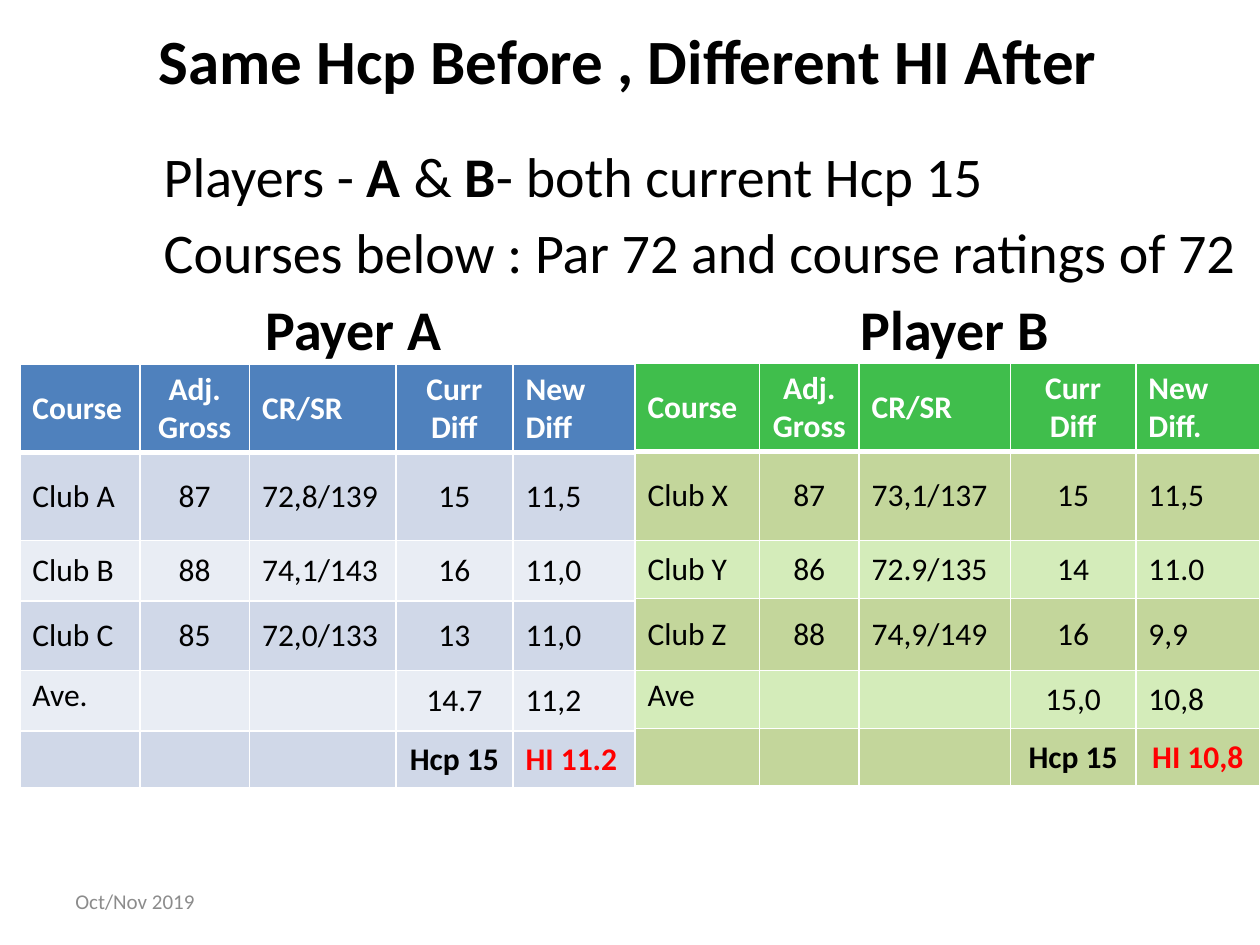
import pptx
import pptx.dml.color
import pptx.enum.text
import pptx.oxml
import pptx.oxml.ns
import pptx.util
from lxml import etree

Cm = pptx.util.Cm
Pt = pptx.util.Pt
ALIGN = pptx.enum.text.PP_ALIGN
ANCHOR = pptx.enum.text.MSO_ANCHOR
FONT = "Calibri"
CENTRED_COLUMNS = (1, 3)

PLAYER_A = [
    ["Course", "Adj.\nGross", "CR/SR", "Curr\nDiff", "New Diff"],
    ["Club A", "87", "72,8/139", "15", "11,5"],
    ["Club B", "88", "74,1/143", "16", "11,0"],
    ["Club C", "85", "72,0/133", "13", "11,0"],
    ["Ave.", "", "", "14.7", "11,2"],
    ["", "", "", "Hcp 15", "HI 11.2"],
]
PLAYER_B = [
    ["Course", "Adj.\nGross", "CR/SR", "Curr\nDiff", "New Diff."],
    ["Club X", "87", "73,1/137", "15", "11,5"],
    ["Club Y", "86", "72.9/135", "14", "11.0"],
    ["Club Z", "88", "74,9/149", "16", "9,9"],
    ["Ave", "", "", "15,0", "10,8"],
    ["", "", "", "Hcp 15", "HI 10,8"],
]


def colour(value):
    return pptx.dml.color.RGBColor.from_string(value)


def add_span(para, text, size, shade="000000", bold=False):
    span = para.add_run()
    span.text = text
    span.font.name = FONT
    span.font.size = Pt(size)
    span.font.bold = bold
    span.font.color.rgb = colour(shade)


def place(shape, box):
    shape.left, shape.top, shape.width, shape.height = [Cm(v) for v in box]


def add_title(page, box):
    title = page.shapes.title
    place(title, box)
    title.text_frame.vertical_anchor = ANCHOR.MIDDLE
    para = title.text_frame.paragraphs[0]
    para.alignment = ALIGN.CENTER
    add_span(para, "Same Hcp Before , Different HI After ", 36, bold=True)


def add_text_box(page, box):
    frame = page.shapes.add_textbox(*[Cm(v) for v in box]).text_frame
    frame.word_wrap = True
    return frame


def add_tabs(para, stops):
    tabs = etree.SubElement(para._p.get_or_add_pPr(), pptx.oxml.ns.qn("a:tabLst"))
    for stop in stops:
        etree.SubElement(tabs, pptx.oxml.ns.qn("a:tab"), pos=str(Cm(stop)), algn="l")


def add_introduction(page, box):
    frame = add_text_box(page, box)
    lines = [
        [("Players - ", False), ("A", True), (" & ", False), ("B", True),
         ("- both current Hcp 15", False)],
        [("Courses below : Par 72 and course ratings of 72", False)],
        [("\tPayer A\tPlayer B", True)],
    ]
    for index, line in enumerate(lines):
        para = frame.add_paragraph() if index else frame.paragraphs[0]
        if index:
            para.space_before = Pt(5.5)
        if line is lines[-1]:
            add_tabs(para, (5.1, 17.1))
        else:
            para._p.get_or_add_pPr().set("marL", str(Cm(3.05)))
        for text, bold in line:
            add_span(para, text, 32, bold=bold)


def add_borders(cell, widths):
    properties = cell._tc.get_or_add_tcPr()
    for side, width in zip("LRTB", widths):
        properties.append(pptx.oxml.parse_xml(
            f'<a:ln{side} {pptx.oxml.ns.nsdecls("a")} w="{Pt(width)}">'
            f'<a:solidFill><a:srgbClr val="FFFFFF"/></a:solidFill></a:ln{side}>'))


def fill_cell(cell, text, fill, shade, bold, alignment):
    cell.fill.solid()
    cell.fill.fore_color.rgb = colour(fill)
    if not text:
        return
    for index, line in enumerate(text.split("\n")):
        frame = cell.text_frame
        para = frame.add_paragraph() if index else frame.paragraphs[0]
        para.alignment = alignment
        add_span(para, line, 18, shade, bold)


def add_score_table(page, box, data, columns, rows, fills, index_alignment):
    shape = page.shapes.add_table(len(rows), len(columns), *[Cm(v) for v in box])
    table = shape.table
    for column, width in zip(table.columns, columns):
        column.width = Cm(width)
    for row, height in zip(table.rows, rows):
        row.height = Cm(height)
    header, odd, even = fills
    last = len(rows) - 1
    for r, values in enumerate(data):
        for c, text in enumerate(values):
            cell = table.cell(r, c)
            average_label = r == last - 1 and c == 0
            cell.vertical_anchor = ANCHOR.TOP if average_label else ANCHOR.MIDDLE
            add_borders(cell, (1, 1, 3 if r == 1 else 1, 3 if r == 0 else 1))
            fill = header if r == 0 else odd if r % 2 else even
            shade = "FFFFFF" if r == 0 else "000000"
            alignment = ALIGN.CENTER if c in CENTRED_COLUMNS else ALIGN.LEFT
            if r == last and c == len(columns) - 1:
                shade, alignment = "FF0000", index_alignment
            fill_cell(cell, text, fill, shade, r in (0, last), alignment)


def add_date(page, box):
    frame = add_text_box(page, box)
    frame.vertical_anchor = ANCHOR.MIDDLE
    add_span(frame.paragraphs[0], "Oct/Nov 2019", 12, "8C8C8C")


def main():
    deck = pptx.Presentation()
    deck.slide_width, deck.slide_height = Cm(25.4), Cm(19.05)
    page = deck.slides.add_slide(deck.slide_layouts[5])
    add_title(page, (1, 0, 23.6, 2.4))
    add_introduction(page, (0, 2.72, 25.4, 14.35))
    add_date(page, (1.27, 17.65, 5.92, 1.02))
    add_score_table(page, (12.8, 7.32, 12.6, 8.5), PLAYER_B,
                    (2.51, 2.01, 3.05, 2.53, 2.5),
                    (1.75, 1.8, 1.17, 1.45, 1.17, 1.16),
                    ("40BE4C", "C3D69B", "D4ECBA"), ALIGN.CENTER)
    add_score_table(page, (0.4, 7.34, 12.4, 8.55), PLAYER_A,
                    (2.42, 2.21, 2.95, 2.36, 2.46),
                    (1.78, 1.78, 1.22, 1.4, 1.22, 1.15),
                    ("4F81BD", "D0D8E8", "E9EDF4"), ALIGN.LEFT)
    deck.save("out.pptx")


if __name__ == "__main__":
    main()
